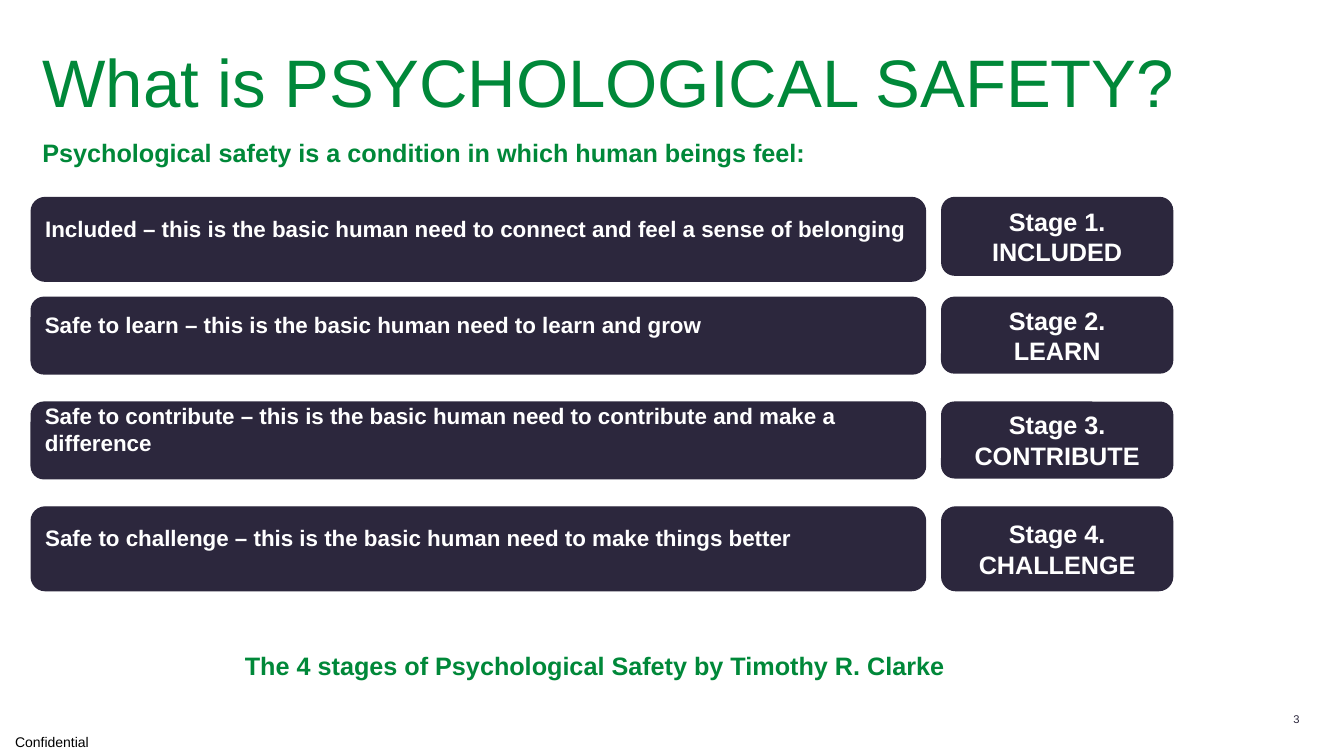
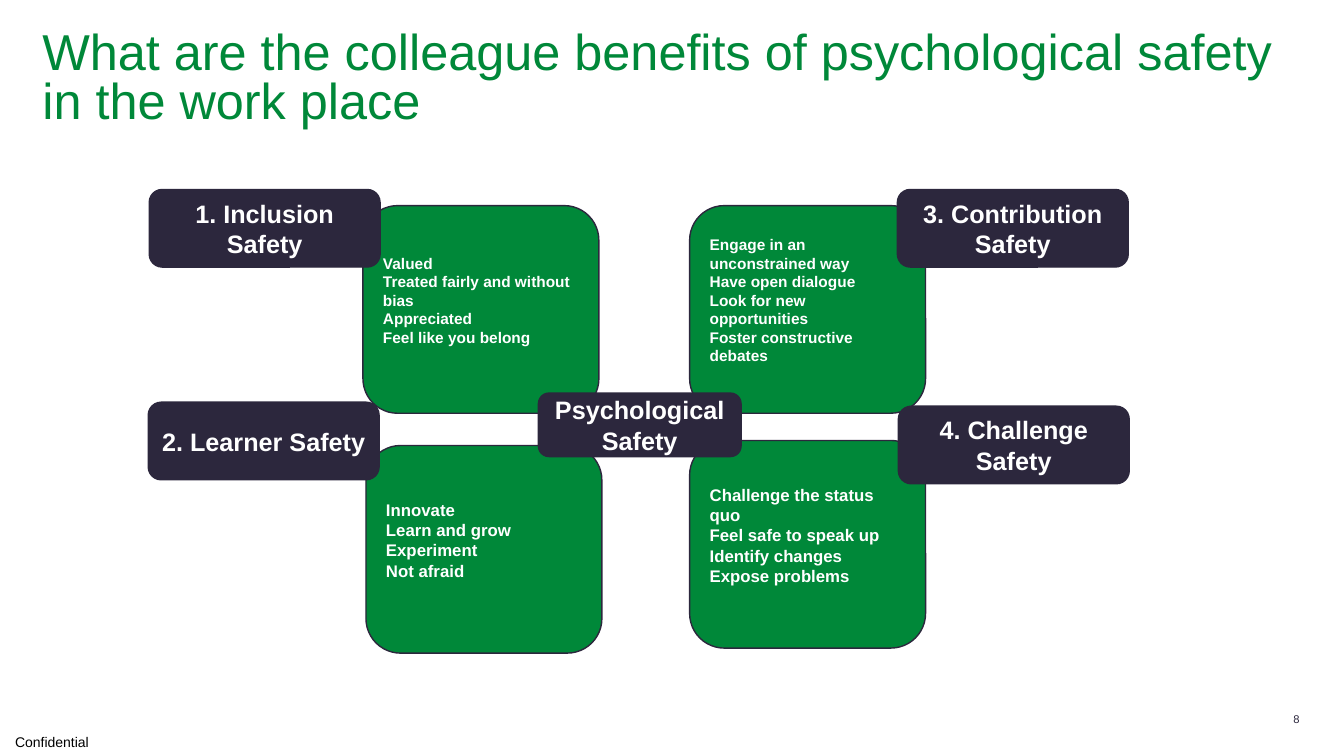
from pptx import Presentation
from pptx.dml.color import RGBColor
from pptx.enum.shapes import MSO_SHAPE
from pptx.enum.text import MSO_ANCHOR, MSO_AUTO_SIZE, PP_ALIGN
from pptx.oxml.xmlchemy import OxmlElement
from pptx.util import Inches, Pt

GREEN = RGBColor(0x00, 0x88, 0x39)
NAVY = RGBColor(0x2C, 0x27, 0x3D)
WHITE = RGBColor(0xFF, 0xFF, 0xFF)
BLACK = RGBColor(0x00, 0x00, 0x00)
FONT = "Arial"

ROUNDED = MSO_SHAPE.ROUNDED_RECTANGLE
LEFT, CENTER, RIGHT = PP_ALIGN.LEFT, PP_ALIGN.CENTER, PP_ALIGN.RIGHT
TOP, MIDDLE = MSO_ANCHOR.TOP, MSO_ANCHOR.MIDDLE
NO_AUTOFIT = MSO_AUTO_SIZE.NONE

TITLE_LAYOUT, LIST_LAYOUT = 5, 1
MARGIN, CONTENT_WIDTH = 0.42, 12.48

# Top, definition height, stage height, definition, stage name
STAGES = [
    (1.96, 0.83, 0.77, "Included – this is the basic human need to connect "
     "and feel a sense of belonging", "INCLUDED"),
    (2.95, 0.76, 0.75, "Safe to learn – this is the basic human need to learn "
     "and grow", "LEARN"),
    (3.99, 0.76, 0.75, "Safe to contribute – this is the basic human need to "
     "contribute and make a difference", "CONTRIBUTE"),
    (5.03, 0.83, 0.83, "Safe to challenge – this is the basic human need to "
     "make things better", "CHALLENGE"),
]

# Panel corner, label corner, text size, label, benefits
BENEFITS = [
    ((3.63, 4.42), (1.47, 3.99), 12, "2. Learner Safety",
     ["Innovate", "Learn and grow", "Experiment", "Not afraid"]),
    ((6.84, 2.04), (8.9, 1.88), 11, "3. Contribution Safety",
     ["Engage in an unconstrained way", "Have open dialogue",
      "Look for new opportunities", "Foster constructive debates"]),
    ((6.84, 4.37), (8.91, 4.03), 12, "4. Challenge Safety",
     ["Challenge the status quo", "Feel safe to speak up",
      "Identify changes", "Expose problems"]),
    ((3.6, 2.04), (1.48, 1.88), 11, "1. Inclusion Safety",
     ["Valued", "Treated fairly and without bias", "Appreciated",
      "Feel like you belong"]),
]


class Deck:
    """Holds the shared style and the slide being built."""

    def __init__(self):
        self.prs = Presentation()
        self.prs.slide_width = Inches(13.33)
        self.prs.slide_height = Inches(7.5)
        self.slide = None

    def add_slide(self, title, size, top, height, number, layout=TITLE_LAYOUT):
        self.slide = self.prs.slides.add_slide(self.prs.slide_layouts[layout])
        heading = self.slide.shapes.title
        self.place(heading, MARGIN, top, CONTENT_WIDTH, height)
        self.fill_text(heading, [title], size, GREEN, spacing=0.8,
                       anchor=TOP, insets=(0, 0))
        self.text(str(number), (11.71, 7.02, 1.18, 0.22), 8, NAVY, RIGHT)

    def place(self, shape, left, top, width, height):
        shape.left, shape.top = Inches(left), Inches(top)
        shape.width, shape.height = Inches(width), Inches(height)

    def fill_text(self, shape, lines, size, color, bold=False, align=LEFT,
                  anchor=MIDDLE, spacing=None, insets=(0.1, 0.05), lift=0):
        """Fill a shape with paragraphs; lift adds bottom inset in inches."""
        frame = shape.text_frame
        frame.text = "\n".join(lines)
        frame.word_wrap = True
        frame.auto_size = NO_AUTOFIT
        frame.vertical_anchor = anchor
        side, edge = insets
        frame.margin_left = frame.margin_right = Inches(side)
        frame.margin_top, frame.margin_bottom = Inches(edge), Inches(edge + lift)
        for paragraph in frame.paragraphs:
            paragraph.alignment = align
            paragraph.space_before = Pt(0)
            if spacing:
                paragraph.line_spacing = spacing
            font = paragraph.font
            font.name, font.size, font.bold = FONT, Pt(size), bold
            font.color.rgb = color

    def lead(self, sentence, box):
        """Put an unbulleted sentence into the body placeholder."""
        body = self.slide.placeholders[1]
        self.place(body, *box)
        self.fill_text(body, [sentence], 18, GREEN, bold=True, anchor=TOP,
                       spacing=1.05, insets=(0, 0))
        properties = body.text_frame.paragraphs[0]._p.get_or_add_pPr()
        properties.set("marL", "0")
        properties.set("indent", "0")
        properties.insert_element_before(OxmlElement("a:buNone"), "a:defRPr")

    def text(self, words, box, size, color, align=LEFT, bold=False):
        area = self.slide.shapes.add_textbox(*map(Inches, box))
        self.fill_text(area, [words], size, color, bold, align, insets=(0, 0))
        return area

    def card(self, lines, box, fill=NAVY, size=18, align=CENTER, lift=0):
        card = self.slide.shapes.add_shape(ROUNDED, *map(Inches, box))
        card.shadow.inherit = False
        card.fill.solid()
        card.fill.fore_color.rgb = fill
        card.line.color.rgb = NAVY
        card.line.width = Pt(1)
        self.fill_text(card, lines, size, WHITE, True, align, lift=lift)

    def add_master_footer(self, words):
        """Build the footer on the current slide, then move it to the master."""
        footer = self.text(words, (0, 7.23, 1.04, 0.27), 10, BLACK)
        footer.text_frame.margin_left = Inches(0.15)
        footer.element.nvSpPr.cNvPr.set("id", "100")
        self.prs.slide_master.shapes.element.append(footer.element)


def build_stages(deck):
    deck.add_slide("What is PSYCHOLOGICAL SAFETY?", 48, 0.55, 0.75, 3,
                   LIST_LAYOUT)
    deck.lead("Psychological safety is a condition in which human beings feel:",
              (MARGIN, 1.35, 10.48, 0.4))
    for number, stage in enumerate(STAGES, 1):
        top, height, stage_height, definition, name = stage
        deck.card([f"Stage {number}.", name], (9.34, top, 2.29, stage_height))
        deck.card([definition], (0.31, top, 8.87, height), size=16,
                  align=LEFT, lift=0.22)
    deck.text("The 4 stages of Psychological Safety by Timothy R. Clarke",
              (1.86, 6.4, 8.08, 0.4), 18, GREEN, CENTER, bold=True)


def build_benefits(deck):
    deck.add_slide("What are the colleague benefits of psychological safety "
                   "in the work place", 36, 0.32, 0.99, 8)
    for panel, label, size, name, benefits in BENEFITS:
        deck.card(benefits, (*panel, 2.34, 2.06), GREEN, size, LEFT, lift=0.18)
        deck.card([name], (*label, 2.29, 0.77))
    deck.card(["Psychological Safety"], (5.34, 3.9, 2.01, 0.63))


def main():
    deck = Deck()
    build_stages(deck)
    deck.add_master_footer("Confidential")
    build_benefits(deck)
    deck.prs.save("out.pptx")


if __name__ == "__main__":
    main()
